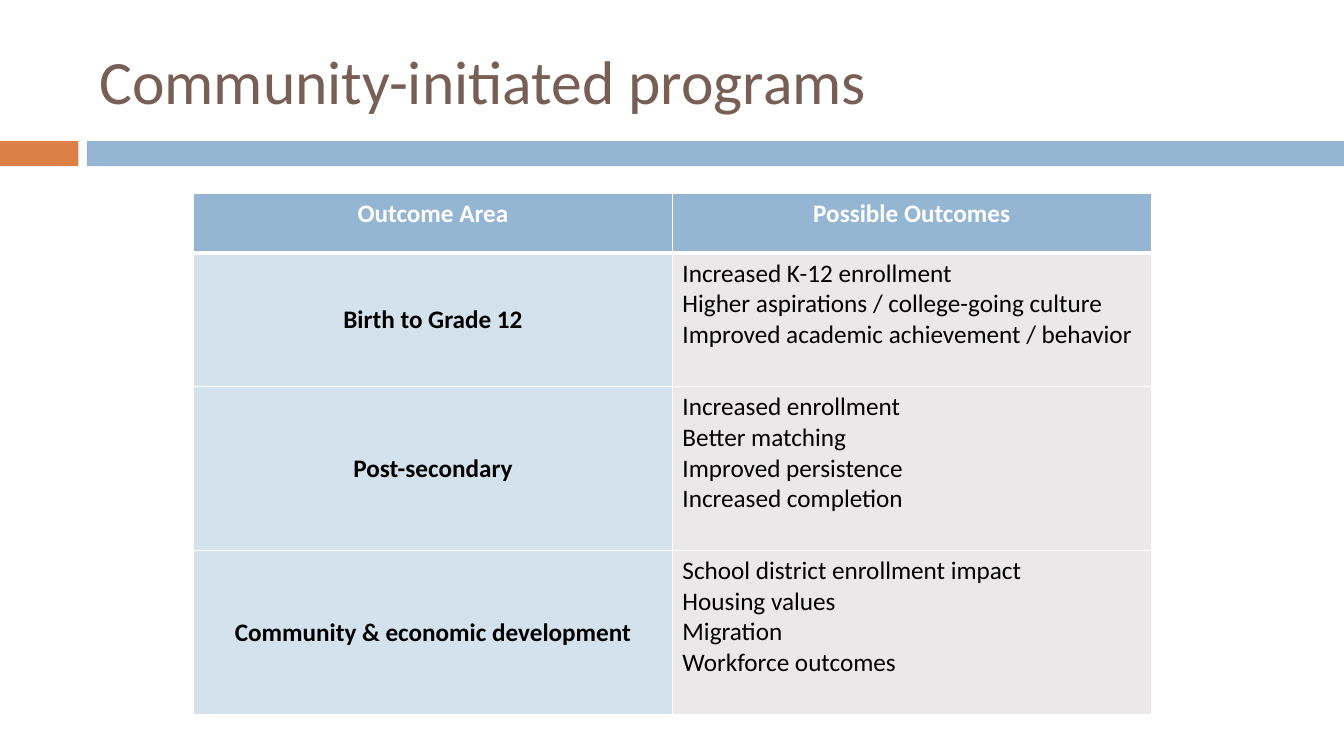
from dataclasses import dataclass

from lxml.etree import SubElement
from pptx import Presentation
from pptx.dml.color import RGBColor
from pptx.enum.shapes import MSO_SHAPE
from pptx.enum.text import MSO_ANCHOR, PP_ALIGN
from pptx.oxml.ns import qn
from pptx.util import Cm, Pt


@dataclass(frozen=True)
class Theme:
    font: str = "Calibri"
    title_size: int = 44
    table_size: int = 18
    title: str = "775F55"
    accent: str = "DD8047"
    band: str = "94B6D2"
    area: str = "D4E2ED"
    outcome: str = "EAE8E8"
    text: str = "000000"
    white: str = "FFFFFF"


theme = Theme()


def write_text(frame, lines, size=theme.table_size, color=theme.text,
               bold=False, align=PP_ALIGN.LEFT):
    for index, line in enumerate(lines):
        paragraph = frame.paragraphs[0] if index == 0 else frame.add_paragraph()
        paragraph.alignment = align
        run = paragraph.add_run()
        run.text = line
        run.font.name = theme.font
        run.font.size = Pt(size)
        run.font.bold = bold
        run.font.color.rgb = RGBColor.from_string(color)


def add_borders(cell, top, bottom):
    """Draw white cell borders; top and bottom widths are in points."""
    properties = cell._tc.get_or_add_tcPr()
    for side, width in (("lnL", 1), ("lnR", 1), ("lnT", top), ("lnB", bottom)):
        line = SubElement(properties, qn(f"a:{side}"), w=str(Pt(width)))
        fill = SubElement(line, qn("a:solidFill"))
        SubElement(fill, qn("a:srgbClr"), val=theme.white)


presentation = Presentation()
presentation.slide_width = Cm(33.87)
presentation.slide_height = Cm(19.05)
slide = presentation.slides.add_slide(presentation.slide_layouts[6])

# Divider under the title
for left, width, color in ((0, 1.98, theme.accent), (2.19, 31.68, theme.band)):
    bar = slide.shapes.add_shape(
        MSO_SHAPE.RECTANGLE, Cm(left), Cm(3.56), Cm(width), Cm(0.63))
    bar.shadow.inherit = False
    bar.fill.solid()
    bar.fill.fore_color.rgb = RGBColor.from_string(color)
    bar.line.fill.background()

# Title
title = slide.shapes.add_textbox(Cm(2.26), Cm(0.64), Cm(30.2), Cm(2.74))
title.text_frame.word_wrap = True
title.text_frame.vertical_anchor = MSO_ANCHOR.MIDDLE
write_text(title.text_frame, ["Community-initiated programs"],
           size=theme.title_size, color=theme.title)

# Outcomes table: row height in cm, outcome area, possible outcomes
rows = [
    (1.5, "Outcome Area", ["Possible Outcomes"]),
    (3.36, "Birth to Grade 12", [
        "Increased K-12 enrollment",
        "Higher aspirations / college-going culture",
        "Improved academic achievement / behavior",
    ]),
    (4.13, "Post-secondary", [
        "Increased enrollment",
        "Better matching",
        "Improved persistence",
        "Increased completion",
    ]),
    (4.13, "Community & economic development", [
        "School district enrollment impact",
        "Housing values",
        "Migration",
        "Workforce outcomes",
    ]),
]
table_height = sum(height for height, _, _ in rows)
table = slide.shapes.add_table(
    len(rows), 2, Cm(4.88), Cm(4.88), Cm(24.13), Cm(table_height)).table

for row_index, (height, area, outcomes) in enumerate(rows):
    table.rows[row_index].height = Cm(height)
    is_header = row_index == 0
    for column_index, lines in enumerate(([area], outcomes)):
        cell = table.cell(row_index, column_index)
        is_area = column_index == 0
        add_borders(cell, top=3 if row_index == 1 else 1,
                    bottom=3 if is_header else 1)
        body_fill = theme.area if is_area else theme.outcome
        cell.fill.solid()
        cell.fill.fore_color.rgb = RGBColor.from_string(
            theme.band if is_header else body_fill)
        if is_area and not is_header:
            cell.vertical_anchor = MSO_ANCHOR.MIDDLE
        is_label = is_header or is_area
        write_text(cell.text_frame, lines, bold=is_label,
                   color=theme.white if is_header else theme.text,
                   align=PP_ALIGN.CENTER if is_label else PP_ALIGN.LEFT)

presentation.save("out.pptx")
